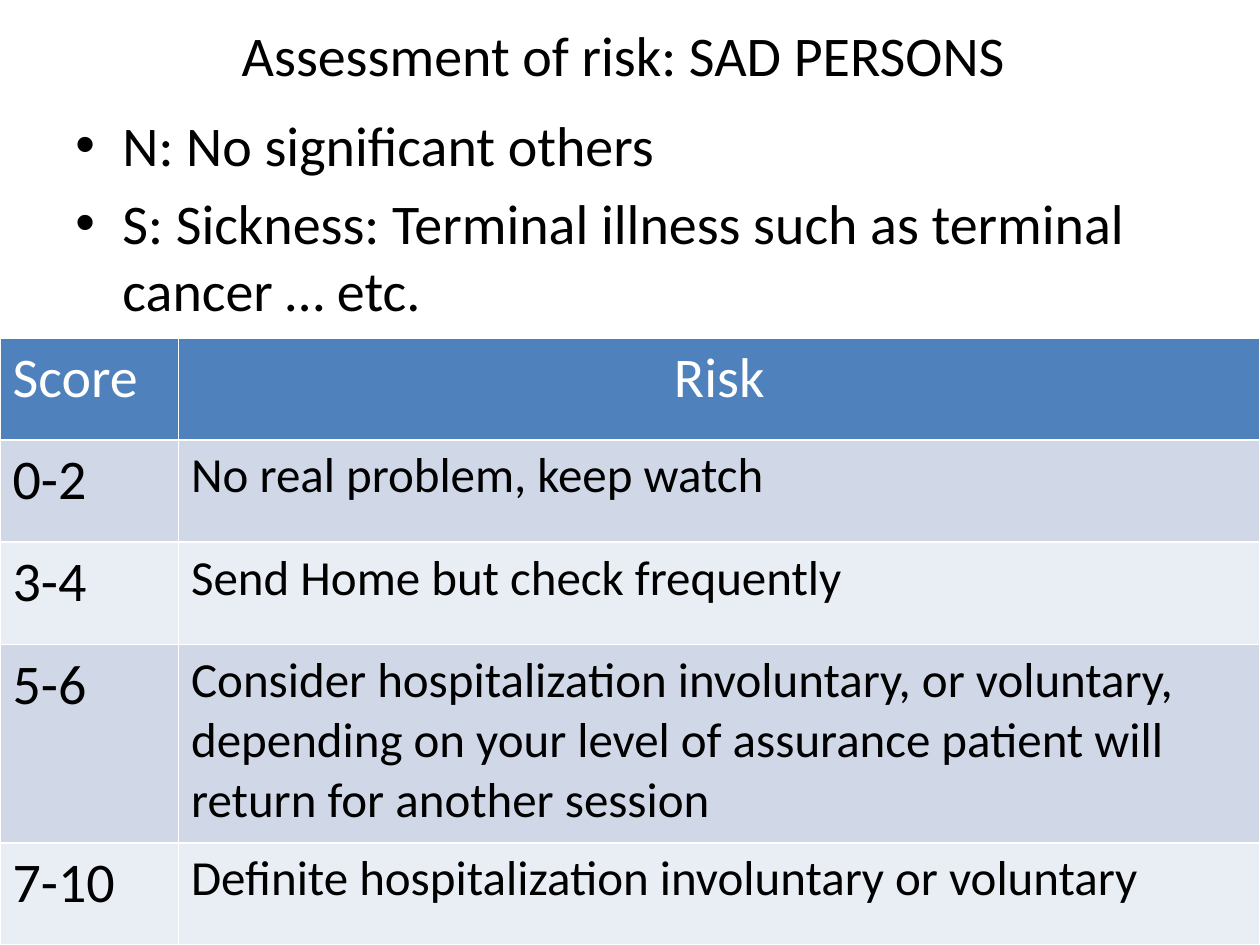
from dataclasses import dataclass

from lxml import etree
from pptx import Presentation
from pptx import util as u
from pptx.dml.color import RGBColor
from pptx.enum import text
from pptx.oxml import ns


@dataclass(frozen=True)
class Theme:
    font: str = "Calibri"
    large: int = 32
    medium: int = 28
    ink: str = "000000"
    header_ink: str = "FFFFFF"
    header_fill: str = "4F81BD"
    bands: tuple = ("D0D8E8", "E9EDF4")


class SlideBuilder:
    """Add styled elements to the current slide."""

    def __init__(self, slide, theme):
        self.slide = slide
        self.theme = theme

    def add_run(self, paragraph, wording, size, color):
        run = paragraph.add_run()
        run.text = wording
        run.font.name = self.theme.font
        run.font.size = u.Pt(size)
        run.font.bold = False
        run.font.color.rgb = RGBColor.from_string(color)

    def add_title(self, wording, left, top, width, height):
        title = self.slide.shapes.title
        title.left, title.top = u.Cm(left), u.Cm(top)
        title.width, title.height = u.Cm(width), u.Cm(height)
        title.text_frame.vertical_anchor = text.MSO_ANCHOR.MIDDLE
        paragraph = title.text_frame.paragraphs[0]
        paragraph.alignment = text.PP_ALIGN.CENTER
        self.add_run(paragraph, wording, self.theme.large, self.theme.ink)

    def add_bullets(self, items, left, top, width, height, indent=0.95):
        box = self.slide.shapes.add_textbox(u.Cm(left), u.Cm(top), u.Cm(width), u.Cm(height))
        frame = box.text_frame
        frame.word_wrap = True
        for index, item in enumerate(items):
            paragraph = frame.add_paragraph() if index else frame.paragraphs[0]
            paragraph.space_before = u.Pt(self.theme.large * 0.2)
            properties = paragraph._p.get_or_add_pPr()
            properties.set("marL", str(u.Cm(indent)))
            properties.set("indent", str(-u.Cm(indent)))
            etree.SubElement(properties, ns.qn("a:buFont"), typeface="Arial")
            etree.SubElement(properties, ns.qn("a:buChar"), char="•")
            self.add_run(paragraph, item, self.theme.large, self.theme.ink)

    def add_table(self, rows, left, top, widths, heights):
        table = self.slide.shapes.add_table(
            len(rows), len(widths), u.Cm(left), u.Cm(top),
            u.Cm(sum(widths)), u.Cm(sum(heights))).table
        for column, width in zip(table.columns, widths):
            column.width = u.Cm(width)
        for row_index, (row, height, values) in enumerate(zip(table.rows, heights, rows)):
            row.height = u.Cm(height)
            for column_index, (cell, value) in enumerate(zip(row.cells, values)):
                self.fill_cell(cell, value, row_index, column_index)

    def fill_cell(self, cell, value, row_index, column_index):
        theme = self.theme
        is_header = row_index == 0
        fill = theme.header_fill if is_header else theme.bands[(row_index - 1) % 2]
        cell.fill.solid()
        cell.fill.fore_color.rgb = RGBColor.from_string(fill)
        paragraph = cell.text_frame.paragraphs[0]
        if is_header and column_index:
            paragraph.alignment = text.PP_ALIGN.CENTER
        size = theme.large if is_header or column_index == 0 else theme.medium
        self.add_run(paragraph, value, size, theme.header_ink if is_header else theme.ink)


def main():
    presentation = Presentation()
    presentation.slide_width, presentation.slide_height = u.Cm(25.4), u.Cm(19.05)
    slide = presentation.slides.add_slide(presentation.slide_layouts.get_by_name("Title Only"))
    builder = SlideBuilder(slide, Theme())
    builder.add_title("Assessment of risk: SAD PERSONS ", 1.27, 0.2, 22.86, 1.78)
    builder.add_bullets(
        ["N: No significant others",
         "S: Sickness: Terminal illness such as terminal cancer … etc."],
        1.27, 2.1, 22.86, 4.45)
    risks = [
        ("Score", "Risk"),
        ("0-2", "No real problem, keep watch"),
        ("3-4", "Send Home but check frequently"),
        ("5-6", "Consider hospitalization involuntary, or voluntary, depending on "
                "your level of assurance patient will return for another session"),
        ("7-10", "Definite hospitalization involuntary or voluntary"),
    ]
    single, triple = 2.06, 4
    builder.add_table(risks, 0, 6.81, [3.6, 21.8], [single, single, single, triple, single])
    presentation.save("out.pptx")


if __name__ == "__main__":
    main()
